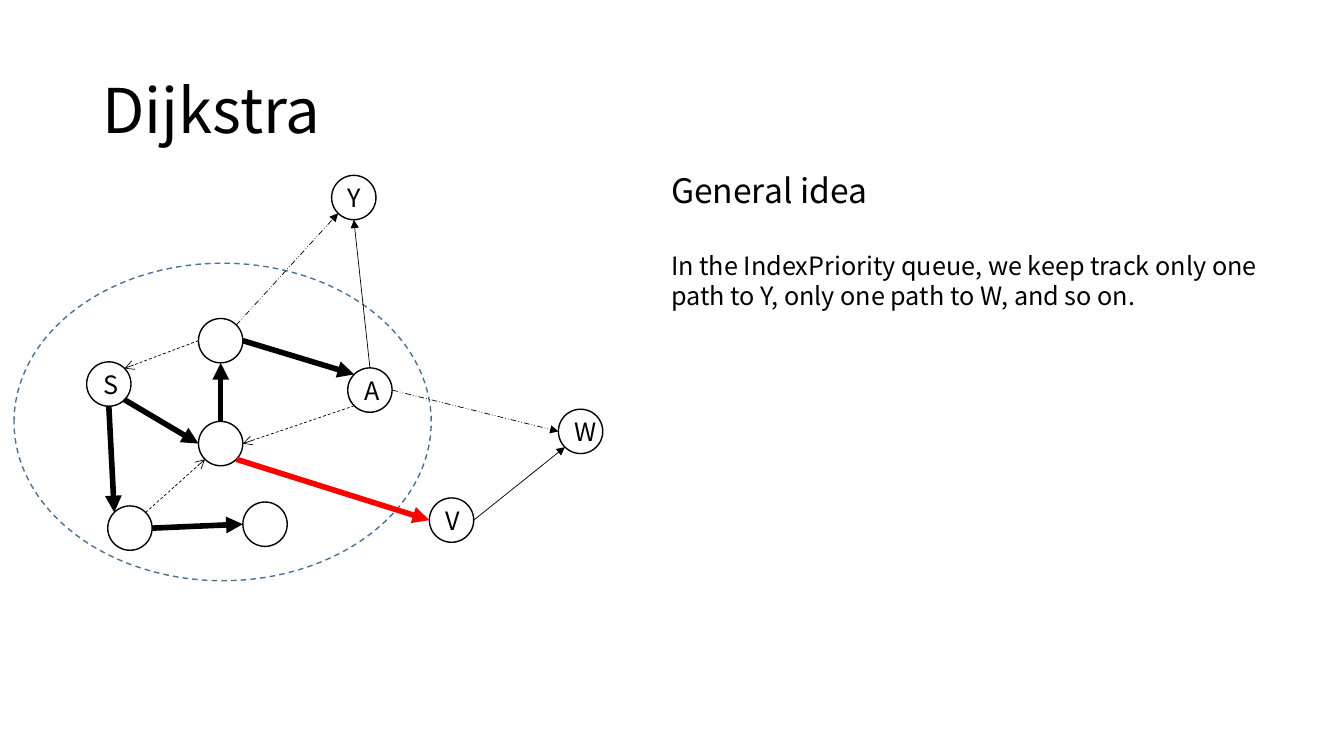
import lxml.etree
import pptx
import pptx.dml.color
import pptx.enum.dml
import pptx.enum.shapes
import pptx.enum.text
import pptx.oxml.ns
import pptx.util

Pt = pptx.util.Pt
DASH = pptx.enum.dml.MSO_LINE
OVAL = pptx.enum.shapes.MSO_SHAPE.OVAL

FONT = "Noto Sans CJK SC"
BLACK = pptx.dml.color.RGBColor(0x00, 0x00, 0x00)
WHITE = pptx.dml.color.RGBColor(0xFF, 0xFF, 0xFF)
RED = pptx.dml.color.RGBColor(0xFF, 0x00, 0x00)
BLUE = pptx.dml.color.RGBColor(0x43, 0x73, 0x9E)

NODE_SIZE = 31.7
DIAGONAL = 0.5 ** 0.5

# Unit offsets from a node's centre to the points where edges meet it
SITES = {
    "N": (0, -1), "NE": (DIAGONAL, -DIAGONAL),
    "E": (1, 0), "SE": (DIAGONAL, DIAGONAL),
    "S": (0, 1), "SW": (-DIAGONAL, DIAGONAL),
    "W": (-1, 0), "NW": (-DIAGONAL, -DIAGONAL),
}

# Name: left and top within the graph, label
NODES = {
    "s": (51.9, 133.5, "S"),
    "upper": (131.8, 102.5, ""),
    "middle": (131.8, 176, ""),
    "a": (238.4, 137.8, "A"),
    "v": (296.7, 230.7, "V"),
    "low left": (67, 236.4, ""),
    "low right": (163.5, 233.6, ""),
    "w": (388.9, 167.3, "W"),
    "y": (226.9, 0.3, "Y"),
}

# Style: colour, width, dash, arrowhead
EDGE_STYLES = {
    "tree": (BLACK, 4, None, "triangle"),
    "chosen": (RED, 4, None, "triangle"),
    "unused": (BLACK, 0.5, DASH.DASH, "arrow"),
    "candidate": (BLACK, 0.5, None, "triangle"),
    "dropped": (BLACK, 0.5, DASH.DASH_DOT_DOT, "triangle"),
}

EDGES = [
    ("upper", "W", "s", "NE", "unused"),
    ("s", "S", "low left", "NW", "tree"),
    ("low left", "E", "low right", "W", "tree"),
    ("s", "SE", "middle", "W", "tree"),
    ("middle", "N", "upper", "S", "tree"),
    ("upper", "E", "a", "NW", "tree"),
    ("middle", "SE", "v", "W", "chosen"),
    ("low left", "NE", "middle", "SW", "unused"),
    ("a", "SW", "middle", "E", "unused"),
    ("v", "E", "w", "SW", "candidate"),
    ("a", "E", "w", "W", "dropped"),
    ("a", "N", "y", "S", "candidate"),
    ("upper", "NE", "y", "SW", "dropped"),
]


def add_run(para, text, size):
    span = para.add_run()
    span.text = text
    span.font.name = FONT
    span.font.size = Pt(size)
    span.font.color.rgb = BLACK


def add_title(page, left, top, width, height):
    title = page.shapes.title
    title.left, title.top = Pt(left), Pt(top)
    title.width, title.height = Pt(width), Pt(height)
    frame = title.text_frame
    frame.vertical_anchor = pptx.enum.text.MSO_ANCHOR.MIDDLE
    para = frame.paragraphs[0]
    para.alignment = pptx.enum.text.PP_ALIGN.LEFT
    para.line_spacing = 0.9
    add_run(para, "Dijkstra", 44)


def add_settled_region(page, left, top, width, height):
    """Draw the dashed outline around the nodes already reached."""
    region = page.shapes.add_shape(OVAL, Pt(left), Pt(top), Pt(width), Pt(height))
    region.shadow.inherit = False
    region.fill.background()
    region.line.color.rgb = BLUE
    region.line.width = Pt(1)
    region.line.dash_style = DASH.DASH


def add_node(page, left, top, label):
    node = page.shapes.add_shape(OVAL, Pt(left), Pt(top), Pt(NODE_SIZE), Pt(NODE_SIZE))
    node.shadow.inherit = False
    node.fill.solid()
    node.fill.fore_color.rgb = WHITE
    node.line.color.rgb = BLACK
    node.line.width = Pt(1)
    if label:
        node.text_frame.vertical_anchor = pptx.enum.text.MSO_ANCHOR.MIDDLE
        para = node.text_frame.paragraphs[0]
        para.alignment = pptx.enum.text.PP_ALIGN.CENTER
        add_run(para, label, 18)


def add_edge(page, start, end, style):
    colour, width, dash, arrowhead = EDGE_STYLES[style]
    edge = page.shapes.add_connector(
        pptx.enum.shapes.MSO_CONNECTOR.STRAIGHT, *map(Pt, start + end))
    edge.line.color.rgb = colour
    edge.line.width = Pt(width)
    if dash is not None:
        edge.line.dash_style = dash
    qn = pptx.oxml.ns.qn
    properties = edge.element.find(qn("p:spPr"))
    line = properties.find(qn("a:ln"))
    lxml.etree.SubElement(line, qn("a:tailEnd"), type=arrowhead)
    lxml.etree.SubElement(properties, qn("a:effectLst"))


def add_graph(page, left, top):
    def site_point(name, site):
        node_left, node_top, label = NODES[name]
        across, down = SITES[site]
        radius = NODE_SIZE / 2
        return (left + node_left + radius * (1 + across),
                top + node_top + radius * (1 + down))

    add_settled_region(page, left, top + 63, 298, 226.8)
    for node_left, node_top, label in NODES.values():
        add_node(page, left + node_left, top + node_top, label)
    for source, source_site, target, target_site, style in EDGES:
        add_edge(page, site_point(source, source_site),
                 site_point(target, target_site), style)


def add_explanation(page, left, top, width, height):
    box = page.shapes.add_textbox(Pt(left), Pt(top), Pt(width), Pt(height))
    frame = box.text_frame
    frame.word_wrap = True
    frame.auto_size = pptx.enum.text.MSO_AUTO_SIZE.SHAPE_TO_FIT_TEXT
    heading = frame.paragraphs[0]
    heading.line_spacing = Pt(28.6)
    add_run(heading, "General idea", 24)
    body = frame.add_paragraph()
    body.line_spacing = Pt(21.4)
    body.space_before = Pt(28.6)
    add_run(body, "In the IndexPriority queue, we keep track only one path to Y, "
                  "only one path to W, and so on.", 18)


def main():
    deck = pptx.Presentation()
    deck.slide_width, deck.slide_height = Pt(960), Pt(540)
    page = deck.slides.add_slide(deck.slide_layouts.get_by_name("Title Only"))
    add_title(page, 66, 28.8, 828, 104.4)
    add_graph(page, 10, 125)
    add_explanation(page, 472.3, 118.1, 453.6, 108.7)
    deck.save("out.pptx")


if __name__ == "__main__":
    main()
